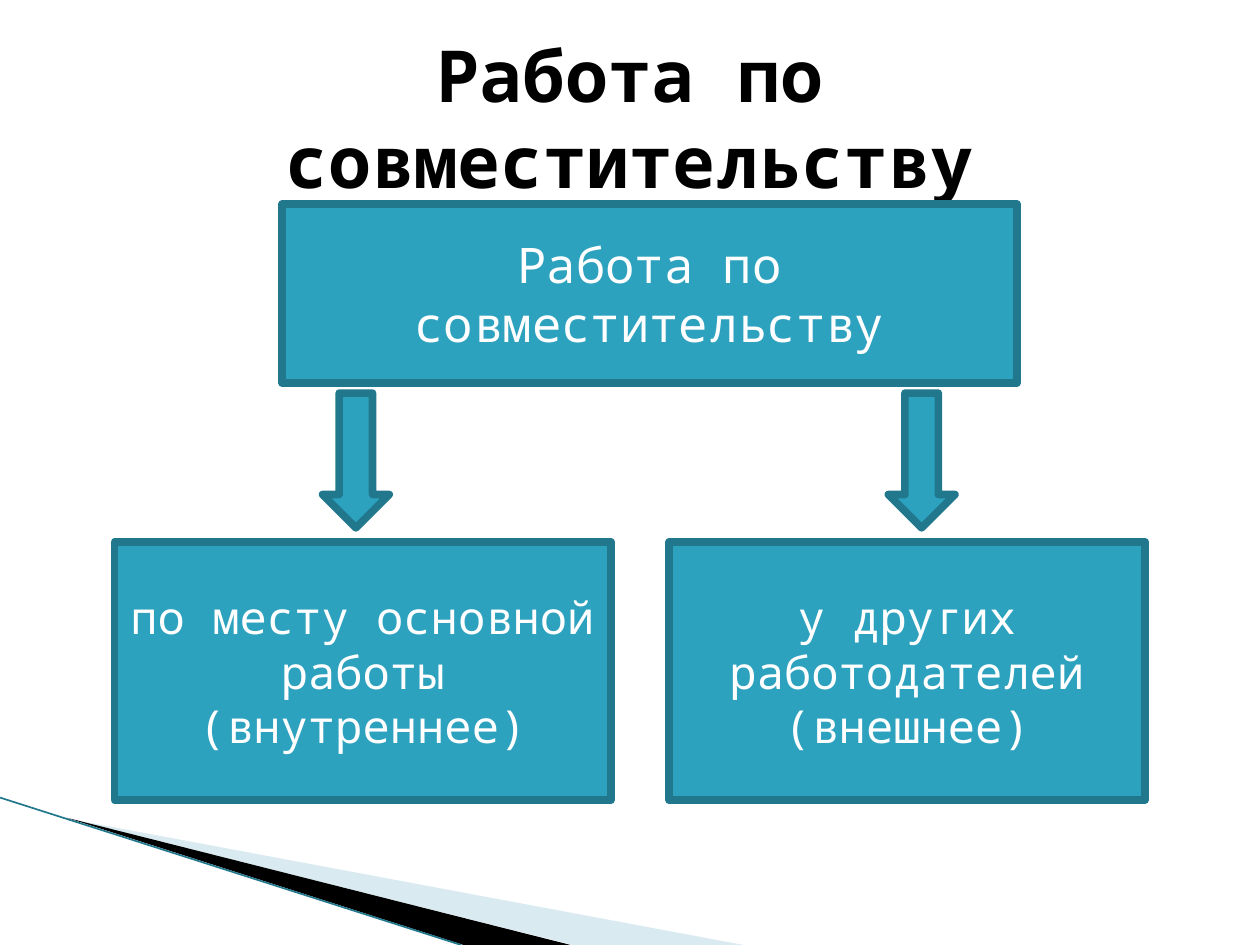
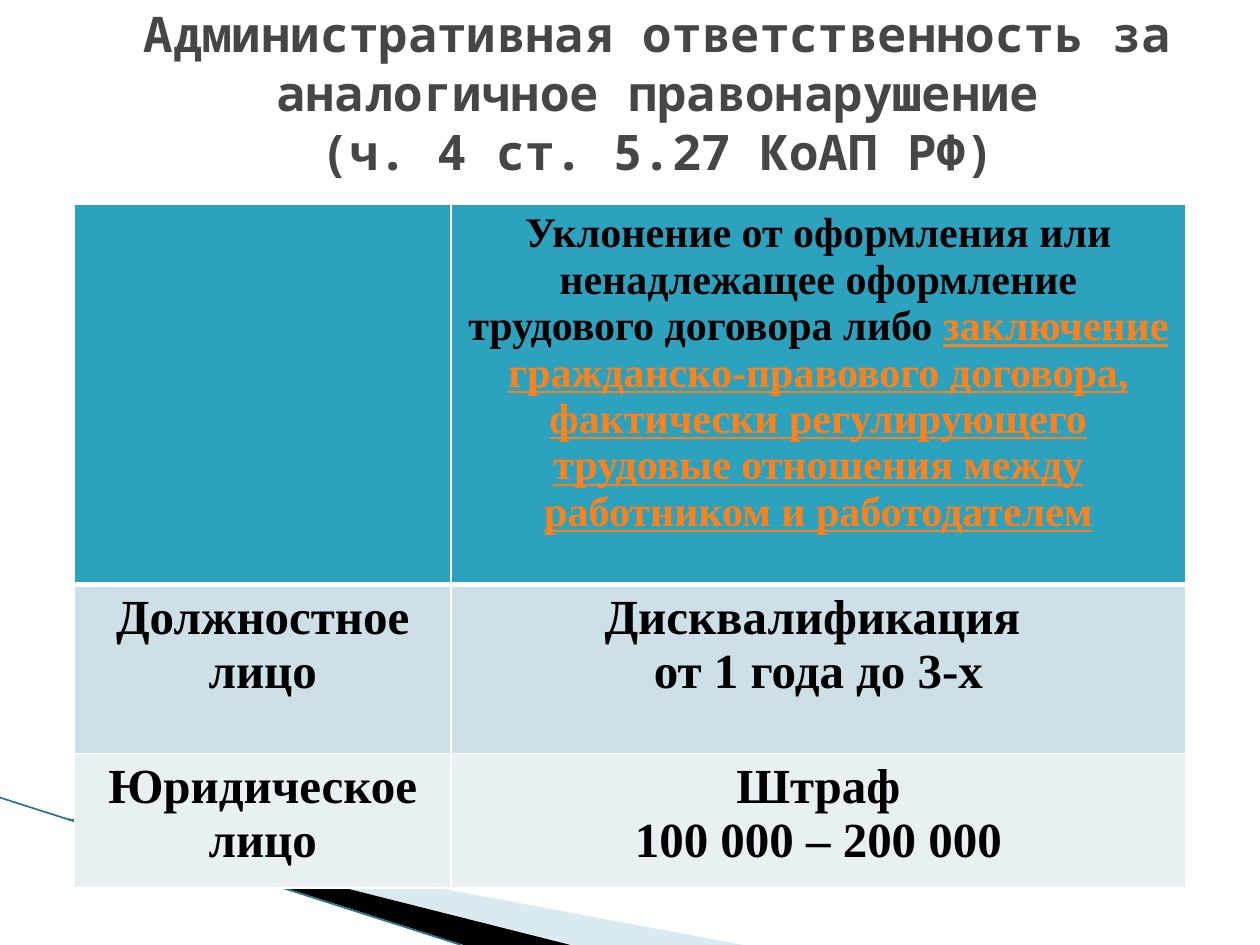
from lxml import etree
from pptx import Presentation
from pptx.dml.color import RGBColor
from pptx.enum import shapes, text
from pptx.oxml.ns import qn
from pptx.util import Inches, Pt

TEAL = RGBColor(0x2D, 0xA2, 0xBF)
DARK_TEAL = RGBColor(0x21, 0x78, 0x8D)
PALE_BLUE = RGBColor(0xA0, 0xCB, 0xDC)
ROW_BLUE = RGBColor(0xCD, 0xE0, 0xE8)
ROW_LIGHT = RGBColor(0xE8, 0xF0, 0xF4)
ORANGE = RGBColor(0xFF, 0x81, 0x19)
GRAY = RGBColor(0x46, 0x46, 0x46)
BLACK = RGBColor(0, 0, 0)
WHITE = RGBColor(0xFF, 0xFF, 0xFF)
MONO = "Noto Sans Mono"
SERIF = "Times New Roman"


def style_text(tf, font, size, color, bold=False):
    """Centre every paragraph and format its runs."""
    for p in tf.paragraphs:
        p.alignment = text.PP_ALIGN.CENTER
        for r in p.runs:
            r.font.name, r.font.size, r.font.bold = font, Pt(size), bold
            r.font.color.rgb = color


def add_wedge(s, points, color, alpha=100):
    """Draw a filled corner triangle without outline."""
    pts = [(Inches(x), Inches(y)) for x, y in points]
    builder = s.shapes.build_freeform(*pts[0])
    builder.add_line_segments(pts[1:], close=True)
    sp = builder.convert_to_shape()
    sp.shadow.inherit = False
    sp.fill.solid()
    sp.fill.fore_color.rgb = color
    sp.line.fill.background()
    if alpha < 100:
        clr = sp.fill._xPr.find(qn("a:solidFill"))[0]
        etree.SubElement(clr, qn("a:alpha")).set("val", str(alpha * 1000))


def add_base_slide(prs):
    """Add a blank slide with the corner decoration."""
    s = prs.slides.add_slide(prs.slide_layouts[6])
    add_wedge(s, [(0.55, 6.5), (5.9, 7.5), (4.55, 7.5)], PALE_BLUE, 40)
    add_wedge(s, [(0.53, 6.49), (4.53, 7.5), (3.68, 7.5)], BLACK)
    edge = s.shapes.add_connector(shapes.MSO_CONNECTOR.STRAIGHT,
                                  0, Inches(6.33), Inches(3.66), Inches(7.5))
    edge.line.color.rgb = DARK_TEAL
    edge.line.width = Pt(0.95)
    etree.SubElement(edge._element.spPr, qn("a:effectLst"))
    return s


def add_title(s, box, title, size, color, bottom=0.05):
    """Add a bold centred title in the given box."""
    tf = s.shapes.add_textbox(*map(Inches, box)).text_frame
    tf.word_wrap = True
    tf.vertical_anchor = text.MSO_ANCHOR.MIDDLE
    tf.margin_bottom = Inches(bottom)
    tf.text = title
    style_text(tf, MONO, size, color, True)


def add_block(s, kind, box, label="", size=26):
    """Add a teal outlined shape with an optional label."""
    sp = s.shapes.add_shape(kind, *map(Inches, box))
    sp.shadow.inherit = False
    sp.fill.solid()
    sp.fill.fore_color.rgb = TEAL
    sp.line.color.rgb = DARK_TEAL
    sp.line.width = Pt(4.33)
    if label:
        tf = sp.text_frame
        tf.word_wrap = True
        tf.vertical_anchor = text.MSO_ANCHOR.MIDDLE
        tf.text = label
        style_text(tf, MONO, size, WHITE)


def add_tree(s, left, top, width):
    """Draw the root block, two arrows and two branch blocks."""
    rect, arrow = shapes.MSO_SHAPE.RECTANGLE, shapes.MSO_SHAPE.DOWN_ARROW
    add_block(s, rect, (left + 1.33, top, 5.83, 1.42), "Работа по совместительству", 28)
    branches = [
        (0, 3.94, 1.65, "по месту основной работы\n(внутреннее)"),
        (width - 3.78, 3.78, 6.14, "у других работодателей\n(внешнее)"),
    ]
    for x, w, arrow_x, label in branches:
        add_block(s, arrow, (left + arrow_x, top + 1.5, 0.53, 1.07))
        add_block(s, rect, (left + x, top + 2.68, w, 2.05), label)


def set_borders(cell, widths):
    """Give a cell white borders, widths in points by side."""
    tcPr = cell._tc.get_or_add_tcPr()
    for side, width in widths.items():
        ln = etree.SubElement(tcPr, qn(f"a:ln{side}"), w=str(Pt(width)))
        fill = etree.SubElement(ln, qn("a:solidFill"))
        etree.SubElement(fill, qn("a:srgbClr"), val=str(WHITE))


def add_penalty_table(s, left, top):
    """Add the table of penalties by type of offender."""
    cols, heights = (2.99, 5.83), (3.02, 1.34, 1.07)
    rows = [
        ("", "Уклонение от оформления или ненадлежащее оформление трудового договора либо "),
        ("Должностное лицо", "Дисквалификация \nот 1 года до 3-х"),
        ("Юридическое лицо", "Штраф\n100 000 – 200 000"),
    ]
    table = s.shapes.add_table(len(rows), len(cols), Inches(left), Inches(top),
                               Inches(sum(cols)), Inches(sum(heights))).table
    table.first_row = table.horz_banding = False
    for col, width in zip(table.columns, cols):
        col.width = Inches(width)
    for i, (height, fill) in enumerate(zip(heights, (TEAL, ROW_BLUE, ROW_LIGHT))):
        table.rows[i].height = Inches(height)
        for j, content in enumerate(rows[i]):
            cell = table.cell(i, j)
            set_borders(cell, {"L": 1, "R": 1, "T": 3 if i == 1 else 1,
                               "B": 3 if i == 0 else 1})
            cell.fill.solid()
            cell.fill.fore_color.rgb = fill
            cell.text_frame.text = content
            style_text(cell.text_frame, SERIF, 28 if i else 24, BLACK, True)
    p = table.cell(0, 1).text_frame.paragraphs[0]
    r = p.add_run()
    r.text = ("заключение гражданско-правового договора, фактически регулирующего "
              "трудовые отношения между работником и работодателем")
    f = r.font
    f.name, f.size, f.bold, f.underline = SERIF, Pt(24), True, True
    f.color.rgb = ORANGE


def build_tree_slide(prs):
    """Build the slide on kinds of secondary employment."""
    s = add_base_slide(prs)
    add_title(s, (0.5, 0.3, 9, 1.25), "Работа по совместительству", 41, BLACK)
    add_tree(s, 0.91, 1.62, 8.18)


def build_penalty_slide(prs):
    """Build the slide on administrative liability."""
    s = add_base_slide(prs)
    add_penalty_table(s, 0.59, 1.62)
    add_title(s, (0.67, 0.29, 9.1, 1.34),
              "Административная ответственность за аналогичное правонарушение"
              "\v(ч. 4 ст. 5.27 КоАП РФ)", 28, GRAY, 0.51)


def main():
    """Build and save the presentation."""
    prs = Presentation()
    prs.slide_width, prs.slide_height = Inches(10), Inches(7.5)
    build_tree_slide(prs)
    build_penalty_slide(prs)
    prs.save("out.pptx")


if __name__ == "__main__":
    main()
